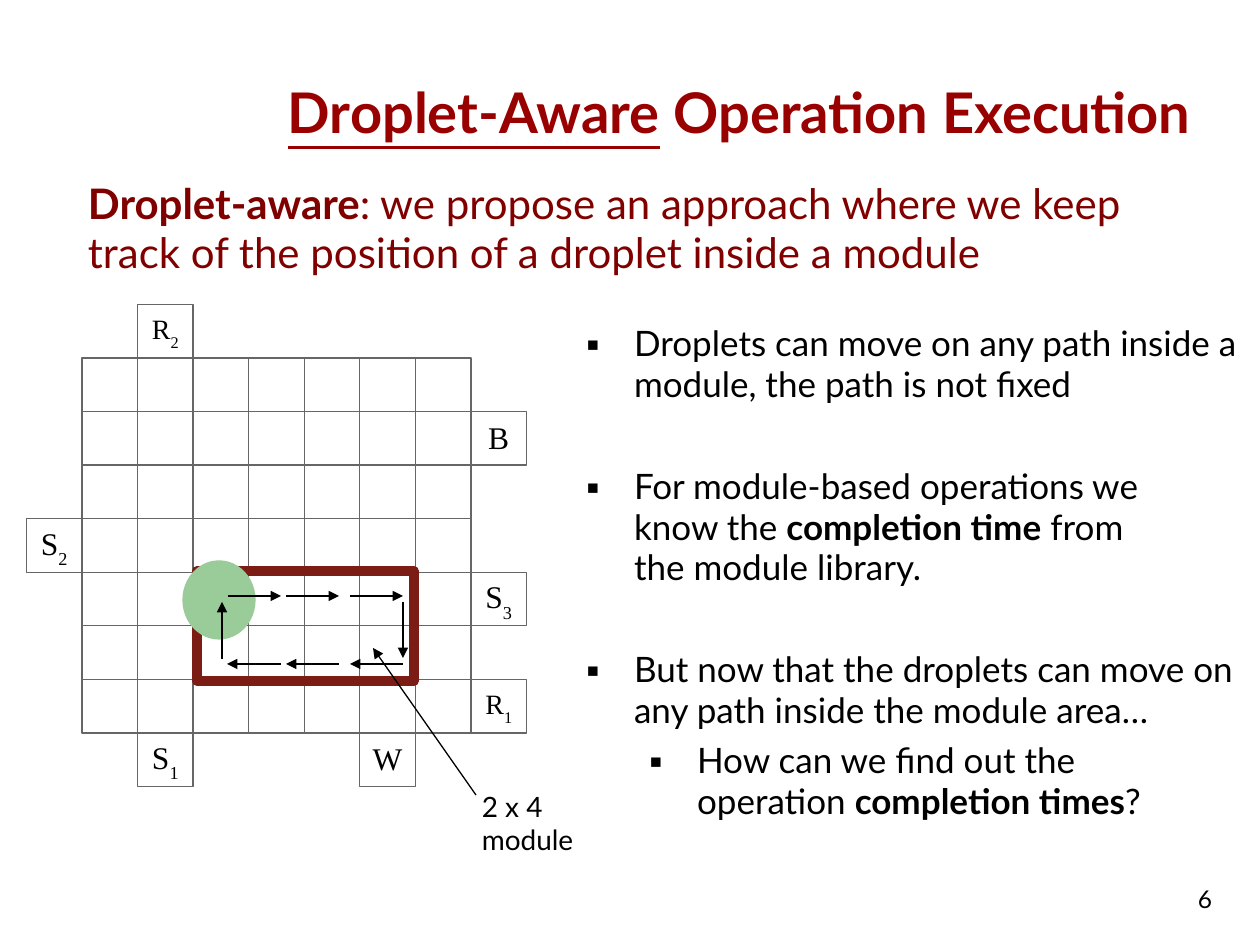
import pptx
import pptx.dml.color
import pptx.enum.shapes
import pptx.enum.text
import pptx.oxml.ns
import pptx.util
from lxml import etree

SCALE = 914400 / 126  # EMU in one px
SANS, SERIF = "Lato", "Times New Roman"
LEFT, TOP, WIDE, HIGH, COUNT = 82, 358, 389, 375, 7
FORMS = pptx.enum.shapes.MSO_SHAPE
ALIGN = pptx.enum.text.PP_ALIGN
ANCHOR = pptx.enum.text.MSO_ANCHOR

# column, row, letter, subscript, size
PORTS = [
    (-1, 3, "S", "2", 18), (1, -1, "R", "2", 16), (7, 1, "B", "", 18),
    (7, 4, "S", "3", 18), (1, 7, "S", "1", 18), (5, 7, "W", "", 18),
    (7, 6, "R", "1", 16),
]

ROUTE = [
    (228, 596, 281, 596), (286, 596, 339, 596), (350, 596, 403, 596),
    (403, 664, 350, 664), (339, 664, 286, 664), (281, 664, 227, 664),
    (222, 659, 222, 602), (403, 602, 403, 658),
]

# level, space before, runs of (text, bold)
POINTS = [
    (0, 0, [("Droplets can move on any path inside a module, "
             "the path is not fixed", False)]),
    (0, 35, [("For module-based operations we\nknow the ", False),
             ("completion time", True),
             (" from\nthe module library.", False)]),
    (0, 35, [("But now that the droplets can move on any path "
              "inside the module area…", False)]),
    (1, 5, [("How can we find out the\noperation ", False),
            ("completion times", True), ("?", False)]),
]


def px(num):
    return pptx.util.Emu(round(num * SCALE))


def color(code):
    return pptx.dml.color.RGBColor.from_string(code)


def add_run(para, text, size, code="000000", face=SANS, bold=False):
    """Add text to a paragraph, with a line break at each newline."""
    for num, part in enumerate(text.split("\n")):
        if num:
            para.add_line_break()
        run = para.add_run()
        run.text = part
        font = run.font
        font.size = pptx.util.Pt(size)
        font.name = face
        font.bold = bold
        font.color.rgb = color(code)
    return run


def set_frame(frame, side=0, edge=0, wrap=True):
    frame.word_wrap = wrap
    frame.margin_left = frame.margin_right = px(side)
    frame.margin_top = frame.margin_bottom = px(edge)


def add_box(slide, area, **frame):
    box = slide.shapes.add_textbox(*map(px, area))
    set_frame(box.text_frame, **frame)
    return box.text_frame


def add_form(slide, kind, area, line, width, fill=None):
    form = slide.shapes.add_shape(kind, *map(px, area))
    form.shadow.inherit = False
    if fill:
        form.fill.solid()
        form.fill.fore_color.rgb = color(fill)
    else:
        form.fill.background()
    form.line.color.rgb = color(line)
    form.line.width = pptx.util.Pt(width)
    if kind == FORMS.ROUNDED_RECTANGLE:
        form.adjustments[0] = 0
    return form


def add_cell(slide, col, row):
    wide, high = WIDE / COUNT, HIGH / COUNT
    area = (LEFT + col * wide, TOP + row * high, wide, high)
    return add_form(slide, FORMS.ROUNDED_RECTANGLE, area, "666666", 0.71)


def add_port(slide, col, row, name, index, size):
    """Add a labelled cell beside the grid."""
    frame = add_cell(slide, col, row).text_frame
    set_frame(frame, 13, 6, wrap=False)
    frame.vertical_anchor = ANCHOR.MIDDLE
    para = frame.paragraphs[0]
    para.alignment = ALIGN.CENTER
    para.line_spacing = 0.96
    add_run(para, name, size, face=SERIF)
    if index:
        run = add_run(para, index, size, face=SERIF)
        run.font._element.set("baseline", "-33000")


def add_arrow(slide, ends, width):
    kind = pptx.enum.shapes.MSO_CONNECTOR.STRAIGHT
    arrow = slide.shapes.add_connector(kind, *map(px, ends))
    arrow.line.color.rgb = color("000000")
    arrow.line.width = pptx.util.Pt(width)
    qn = pptx.oxml.ns.qn
    etree.SubElement(arrow.line._get_or_add_ln(), qn("a:tailEnd"),
                     type="triangle")
    etree.SubElement(arrow._element.spPr, qn("a:effectLst"))


def set_bullet(para, left, hang):
    qn = pptx.oxml.ns.qn
    props = para._p.get_or_add_pPr()
    props.set("marL", str(px(left)))
    props.set("indent", str(px(-hang)))
    tint = etree.SubElement(props, qn("a:buClr"))
    etree.SubElement(tint, qn("a:srgbClr"), val="000000")
    etree.SubElement(props, qn("a:buFont"), typeface=SANS)
    etree.SubElement(props, qn("a:buChar"), char="▪")


def add_points(slide):
    frame = add_box(slide, (586, 324, 652, 470))
    for num, (level, space, runs) in enumerate(POINTS):
        para = frame.add_paragraph() if num else frame.paragraphs[0]
        para.level = level
        para.line_spacing = 0.97
        para.space_before = pptx.util.Pt(space)
        set_bullet(para, 48 + 63 * level, 48)
        for text, bold in runs:
            add_run(para, text, 20, bold=bold)


def set_title(slide):
    title = slide.shapes.title
    title.left, title.top, title.width, title.height = map(
        px, (63, 38, 1128, 152))
    frame = title.text_frame
    set_frame(frame)
    frame.vertical_anchor = ANCHOR.MIDDLE
    para = frame.paragraphs[0]
    para.alignment = ALIGN.RIGHT
    para.line_spacing = 0.97
    run = add_run(para, "Droplet-Aware", 32, "990000", bold=True)
    run.font.underline = True
    add_run(para, " Operation Execution", 32, "990000", bold=True)


def add_grid(slide):
    for row in range(COUNT):
        for col in range(COUNT):
            add_cell(slide, col, row)
    for port in PORTS:
        add_port(slide, *port)


def add_module(slide):
    """Add the framed module, its droplet, the route and the callout."""
    add_form(slide, FORMS.ROUNDED_RECTANGLE, (197, 571, 217, 110),
             "7B1C15", 5.67)
    add_form(slide, FORMS.OVAL, (183, 561, 72, 78), "99CC99", 0.75, "99CC99")
    for ends in ROUTE:
        add_arrow(slide, ends, 1.45)
    add_arrow(slide, (476, 795, 373, 648), 0.75)
    para = add_box(slide, (469, 786, 127, 78), side=13, edge=6).paragraphs[0]
    para.line_spacing = 0.96
    add_run(para, "2 x 4\nmodule", 16)


def add_lead(slide):
    para = add_box(slide, (88, 180, 1068, 121)).paragraphs[0]
    para.line_spacing = 0.97
    add_run(para, "Droplet-aware", 24, "800000", bold=True)
    add_run(para, ": we propose an approach where we keep track of "
            "the position of a droplet inside a module", 24, "800000")


def add_number(slide):
    para = add_box(slide, (1198, 886, 50, 40)).paragraphs[0]
    para.line_spacing = 0.96
    add_run(para, "6", 14)


def main():
    deck = pptx.Presentation()
    deck.slide_width, deck.slide_height = px(1260), px(945)
    slide = deck.slides.add_slide(deck.slide_layouts[5])
    add_number(slide)
    set_title(slide)
    add_grid(slide)
    add_module(slide)
    add_points(slide)
    add_lead(slide)
    deck.save("out.pptx")


if __name__ == "__main__":
    main()
